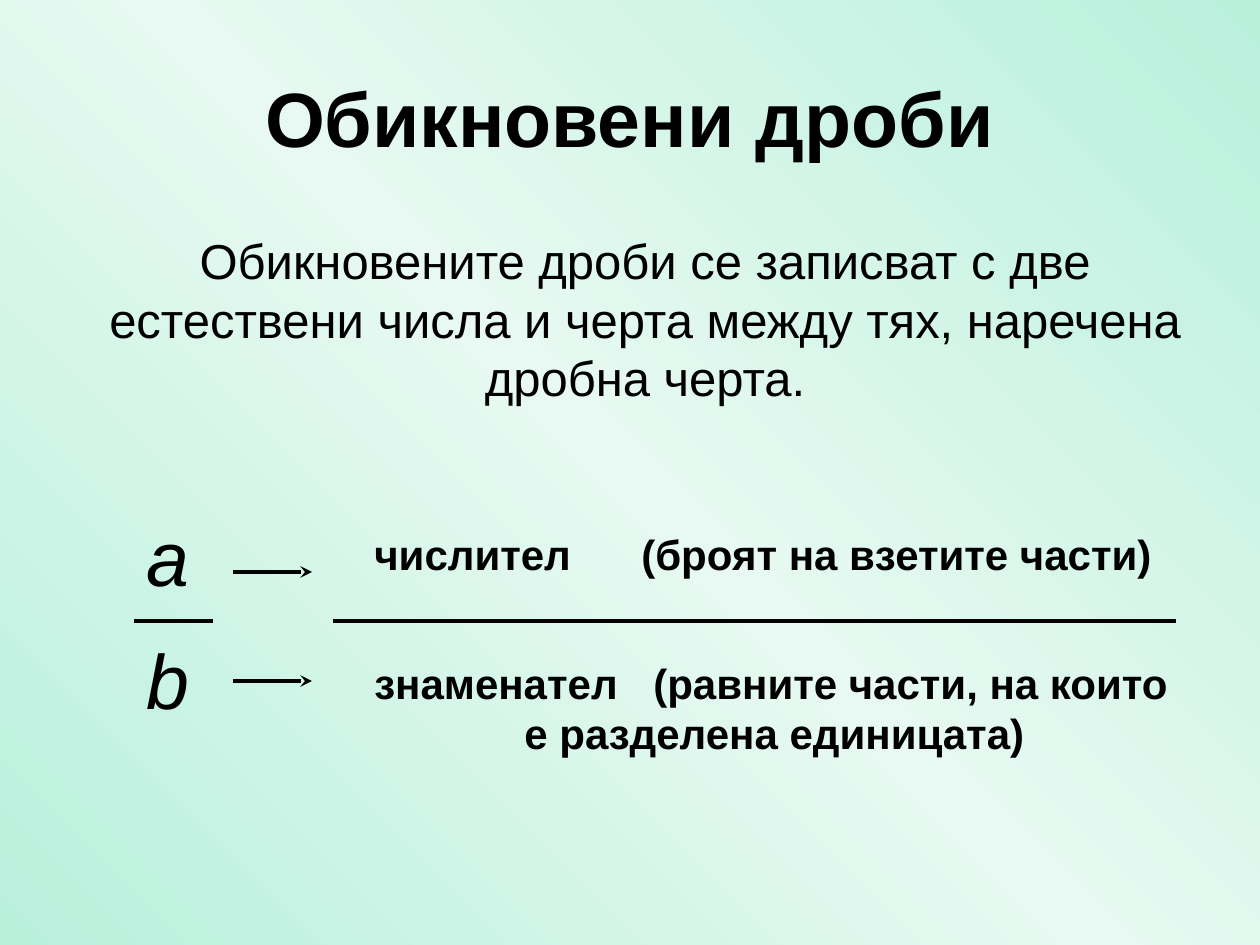
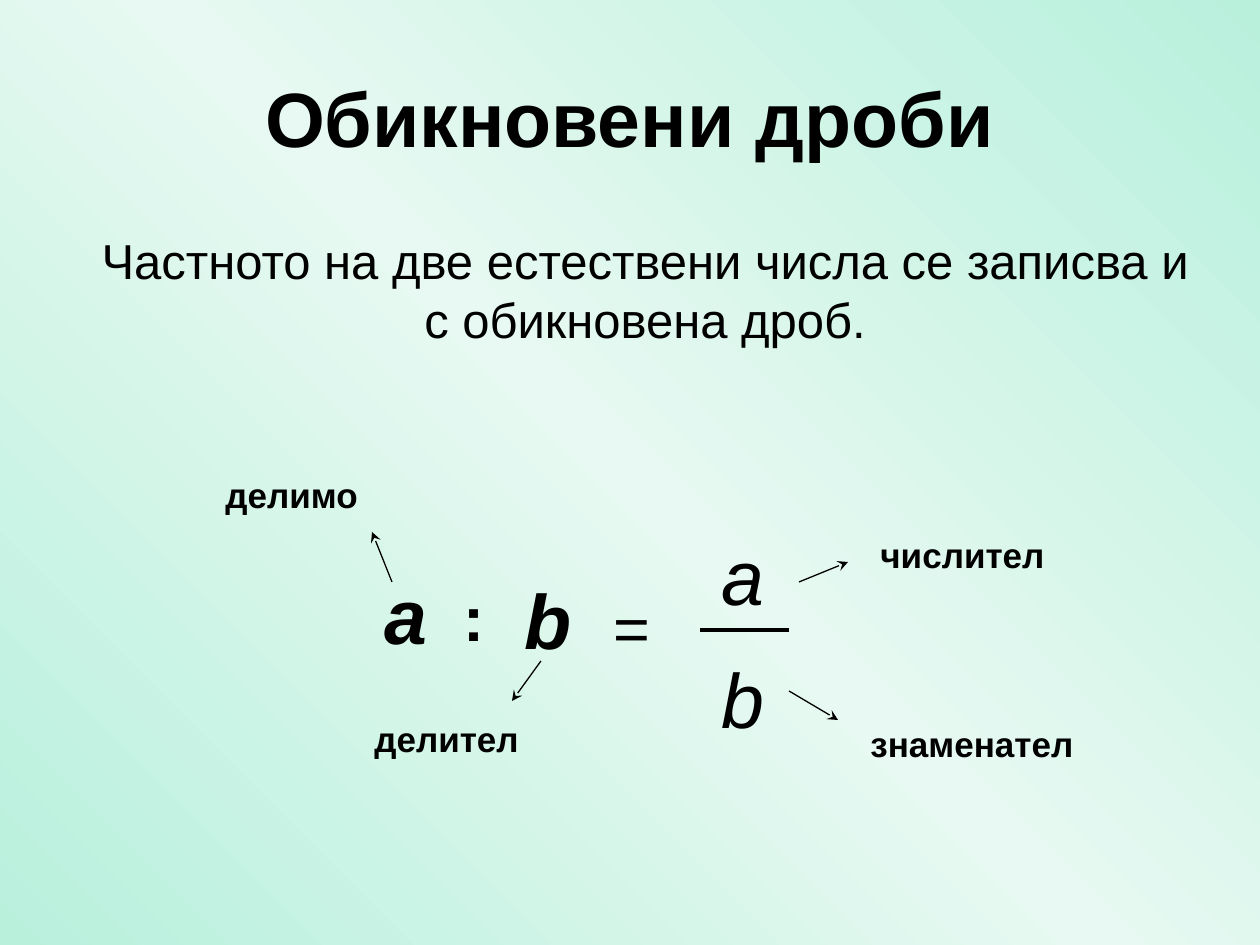
import pptx
import pptx.dml.color
import pptx.enum.shapes
import pptx.enum.text
import pptx.oxml
import pptx.oxml.ns
import pptx.util

PX_PER_INCH = 126
BLACK = pptx.dml.color.RGBColor(0x00, 0x00, 0x00)
MINT = pptx.dml.color.RGBColor(0xB8, 0xF0, 0xDC)
PALE_MINT = pptx.dml.color.RGBColor(0xE7, 0xF9, 0xF2)
FONT = "Arial"
TITLE = "Обикновени дроби"
BAR_WEIGHT = 2.25
POINTER_WEIGHT = 0.75
NAMESPACE = pptx.oxml.ns.nsdecls("a")
CENTER = pptx.enum.text.PP_ALIGN.CENTER
MIDDLE = pptx.enum.text.MSO_ANCHOR.MIDDLE


def px(length):
    return pptx.util.Emu(round(length * 914400 / PX_PER_INCH))


class Lesson:
    """Holds the deck, its style and the current page."""

    def __init__(self):
        self.deck = pptx.Presentation()
        self.deck.slide_width, self.deck.slide_height = px(1260), px(945)
        self.page = None
        self.paint_background()

    def paint_background(self):
        """Give the master a diagonal gradient that is pale in the middle."""
        fill = self.deck.slide_master.background.fill
        fill.gradient()
        stops = "".join(
            f'<a:gs pos="{percent * 1000}"><a:srgbClr val="{color}"/></a:gs>'
            for percent, color in ((0, MINT), (50, PALE_MINT), (100, MINT)))
        gradient = pptx.oxml.parse_xml(
            f'<a:gradFill {NAMESPACE} rotWithShape="0"><a:gsLst>{stops}</a:gsLst>'
            '<a:lin ang="18900000" scaled="1"/></a:gradFill>')
        properties = self.deck.slide_master.element.cSld.bg.bgPr
        properties.replace(properties.find(pptx.oxml.ns.qn("a:gradFill")), gradient)

    def new_page(self, statement):
        self.page = self.deck.slides.add_slide(self.deck.slide_layouts[6])
        title = self.text(TITLE, 63, 38, 1134, 158, 44, bold=True, align=CENTER)
        title.text_frame.vertical_anchor = MIDDLE
        self.text(statement, 74, 224, 1142, 189, 28, align=CENTER)

    def text(self, words, left, top, width, height, size,
             bold=False, italic=False, align=None, tabs=()):
        box = self.page.shapes.add_textbox(px(left), px(top), px(width), px(height))
        box.text_frame.word_wrap = True
        para = box.text_frame.paragraphs[0]
        para.text = words
        para.alignment = align
        if tabs:
            stops = "".join(f'<a:tab pos="{px(tab)}" algn="l"/>' for tab in tabs)
            para._p.get_or_add_pPr().append(
                pptx.oxml.parse_xml(f"<a:tabLst {NAMESPACE}>{stops}</a:tabLst>"))
        for span in para.runs:
            span.font.name = FONT
            span.font.size = pptx.util.Pt(size)
            span.font.bold = bold
            span.font.italic = italic
            span.font.color.rgb = BLACK
        return box

    def symbol(self, letter, left, top, size=44, bold=False, italic=True):
        self.text(letter, left, top, 69, 105, size, bold, italic)

    def label(self, words, left, top, width):
        self.text(words, left, top, width, 54, 20, bold=True)

    def line(self, start, end, weight=BAR_WEIGHT, arrow=False):
        connector = self.page.shapes.add_connector(
            pptx.enum.shapes.MSO_CONNECTOR.STRAIGHT, *map(px, start + end))
        connector.line.color.rgb = BLACK
        connector.line.width = pptx.util.Pt(weight)
        if arrow:
            connector.line._get_or_add_ln().append(
                pptx.oxml.parse_xml(f'<a:tailEnd {NAMESPACE} type="stealth"/>'))
        connector._element.spPr.append(
            pptx.oxml.parse_xml(f"<a:effectLst {NAMESPACE}/>"))

    def fraction(self, left, top, bar_left, bar_width):
        """Write a over b with the fraction bar between them."""
        self.symbol("a", left, top)
        self.symbol("b", left, top + 123)
        bar_top = top + 118 if bar_width < 85 else top + 108
        self.line((bar_left, bar_top), (bar_left + bar_width, bar_top))


def build_parts_page(lesson):
    lesson.new_page("Обикновените дроби се записват с две естествени числа "
                    "и черта между тях, наречена дробна черта.")
    lesson.fraction(134, 503, bar_left=134, bar_width=79)
    for arrow_top in (572, 681):
        lesson.line((233, arrow_top), (312, arrow_top), arrow=True)
    lesson.line((333, 621), (1176, 621))
    lesson.text("числител\t(броят на взетите части)",
                362, 522, 824, 63, 24, bold=True, tabs=(267,))
    lesson.text("знаменател\t(равните части, на които\v\tе разделена единицата)",
                362, 651, 898, 189, 24, bold=True, tabs=(150, 279))


def build_quotient_page(lesson):
    lesson.new_page("Частното на две естествени числа се записва "
                    "и с обикновена дроб.")
    lesson.symbol("a", 372, 561, bold=True)
    lesson.symbol(":", 451, 572, size=36, bold=True, italic=False)
    lesson.symbol("b", 512, 566, bold=True)
    lesson.symbol("=", 601, 582, size=36, italic=False)
    lesson.fraction(709, 522, bar_left=700, bar_width=89)

    pointers = (((392, 582), (372, 532)), ((541, 661), (512, 701)),
                ((799, 582), (848, 562)), ((789, 691), (838, 720)))
    for start, end in pointers:
        lesson.line(start, end, POINTER_WEIGHT, arrow=True)

    labels = (("делимо", 213, 467, 159), ("делител", 362, 711, 189),
              ("числител", 868, 527, 208), ("знаменател", 858, 716, 258))
    for words, left, top, width in labels:
        lesson.label(words, left, top, width)


def main():
    lesson = Lesson()
    build_parts_page(lesson)
    build_quotient_page(lesson)
    lesson.deck.save("out.pptx")


if __name__ == "__main__":
    main()
